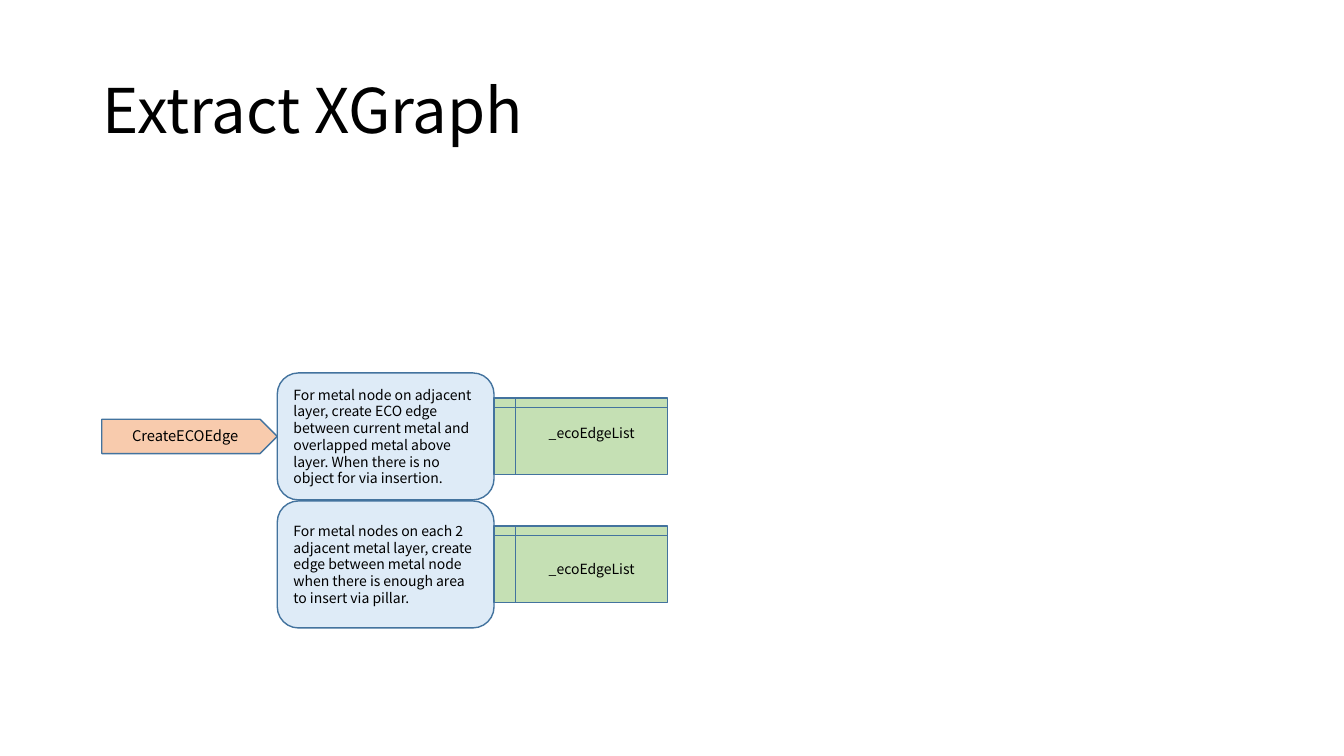
"""Build the Extract XGraph slide."""
from dataclasses import dataclass

from pptx import Presentation
from pptx.dml.color import RGBColor
from pptx.enum.shapes import MSO_SHAPE
from pptx.enum.text import MSO_ANCHOR, PP_ALIGN
from pptx.util import Inches, Pt

TAG = MSO_SHAPE.PENTAGON
STEP = MSO_SHAPE.FLOWCHART_ALTERNATE_PROCESS
STORE = MSO_SHAPE.FLOWCHART_INTERNAL_STORAGE
LEFT, CENTER = PP_ALIGN.LEFT, PP_ALIGN.CENTER
MIDDLE = MSO_ANCHOR.MIDDLE

FONT = "Noto Sans CJK SC"
COLS = (1.01, 2.75, 4.9, 6.62)
TOP, PITCH = 3.7, 1.27


@dataclass(frozen=True)
class Kind:
    """Look shared by all boxes of one column."""
    col: int
    form: int
    high: float
    fill: str
    size: float
    align: int


@dataclass(frozen=True)
class Box:
    """One box: its kind, grid row, text and bottom margin."""
    kind: Kind
    row: int
    text: str
    foot: float = 0.05


CALL = Kind(0, TAG, 0.34, "F8CBAD", 10.5, CENTER)
TASK = Kind(1, STEP, 1.26, "DEEBF7", 10, LEFT)
LIST = Kind(2, STORE, 0.76, "C5E0B4", 10, CENTER)

BOXES = (
    Box(CALL, 0, "CreateECOEdge"),
    Box(TASK, 0, "For metal node on adjacent layer, create ECO edge between "
        "current metal and overlapped metal above layer. When there is no "
        "object for via insertion."),
    Box(LIST, 0, "_ecoEdgeList", 0.22),
    Box(TASK, 1, "For metal nodes on each 2 adjacent metal layer, create edge "
        "between metal node when there is enough area to insert via pillar."),
    Box(LIST, 1, "_ecoEdgeList"),
)


def color(code: str) -> RGBColor:
    """Turn a hex string into a colour."""
    return RGBColor.from_string(code)


def write(frame, text: str, size: float, align: int, space) -> None:
    """Fill a text frame with one formatted paragraph."""
    frame.text = text
    frame.word_wrap = True
    frame.vertical_anchor = MIDDLE
    para = frame.paragraphs[0]
    para.alignment = align
    para.line_spacing = space
    para.font.name = FONT
    para.font.size = Pt(size)
    para.font.color.rgb = color("000000")


def draw(slide, box: Box) -> None:
    """Draw one box, centred on its grid row."""
    kind = box.kind
    left, right = COLS[kind.col:kind.col + 2]
    top = TOP + box.row * PITCH + (TASK.high - kind.high) / 2
    shape = slide.shapes.add_shape(
        kind.form, Inches(left), Inches(top),
        Inches(right - left), Inches(kind.high))
    shape.shadow.inherit = False
    shape.fill.solid()
    shape.fill.fore_color.rgb = color(kind.fill)
    shape.line.color.rgb = color("43739E")
    shape.line.width = Pt(1)
    shape.text_frame.margin_bottom = Inches(box.foot)
    write(shape.text_frame, box.text, kind.size, kind.align, Pt(12))


def main() -> None:
    """Build and save the deck."""
    deck = Presentation()
    deck.slide_width, deck.slide_height = Inches(13.33), Inches(7.5)
    slide = deck.slides.add_slide(deck.slide_layouts[5])
    title = slide.shapes.title
    title.left, title.top = Inches(0.92), Inches(0.4)
    title.width, title.height = Inches(11.5), Inches(1.45)
    write(title.text_frame, "Extract XGraph", 44, LEFT, 0.9)
    for box in BOXES:
        draw(slide, box)
    deck.save("out.pptx")


if __name__ == "__main__":
    main()
